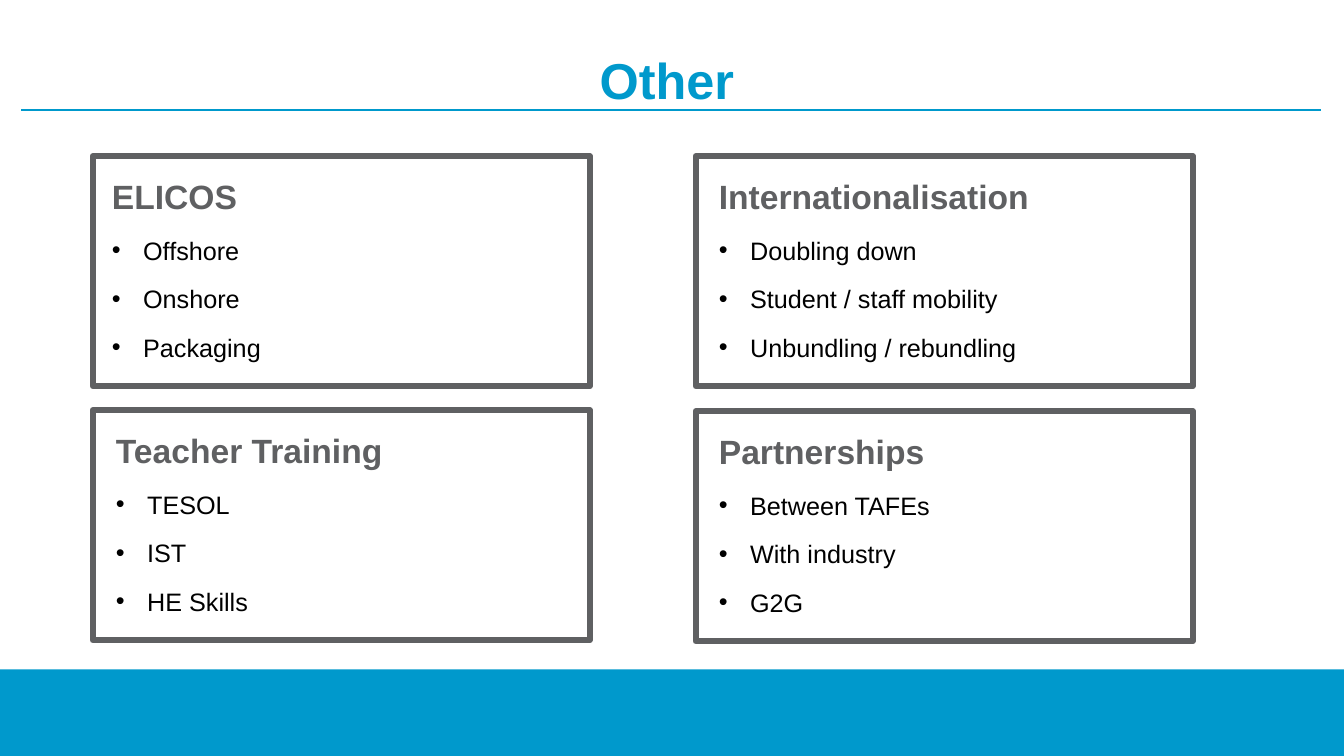
from lxml import etree
from pptx import Presentation
from pptx.dml.color import RGBColor
from pptx.enum.shapes import MSO_CONNECTOR, MSO_SHAPE
from pptx.enum.text import MSO_ANCHOR, MSO_AUTO_SIZE, PP_ALIGN
from pptx.oxml.ns import qn
from pptx.util import Inches, Pt

BLUE = RGBColor(0x00, 0x99, 0xCC)
GREY = RGBColor(0x5F, 0x60, 0x62)
BLACK = RGBColor(0x00, 0x00, 0x00)
RECTANGLE = MSO_SHAPE.RECTANGLE
STRAIGHT = MSO_CONNECTOR.STRAIGHT
TOP = MSO_ANCHOR.TOP
NO_AUTOFIT = MSO_AUTO_SIZE.NONE
LEFT, CENTER = PP_ALIGN.LEFT, PP_ALIGN.CENTER
COMPARISON_LAYOUT = 4

TITLE_FONT = {"name": "Arial", "size": Pt(36), "bold": True}
HEADING_FONT = {"name": "Arial", "size": Pt(24), "bold": True}
ITEM_FONT = {"name": "Arial", "size": Pt(18), "bold": False}
FRAME = {"word_wrap": True, "auto_size": NO_AUTOFIT, "vertical_anchor": TOP}
HEADING_SPACING = {"alignment": LEFT, "line_spacing": 1.05,
                   "space_before": Pt(0), "space_after": Pt(12)}
ITEM_SPACING = {"alignment": LEFT, "line_spacing": 1.05,
                "space_before": Pt(0), "space_after": Pt(12)}

PANEL_WIDTH, PANEL_HEIGHT = 4.93, 2.28
PANELS = [
    (0.92, 1.55, 0.09, "ELICOS", ["Offshore", "Onshore", "Packaging"]),
    (6.9, 1.55, 0.13, "Internationalisation",
     ["Doubling down", "Student / staff mobility", "Unbundling / rebundling"]),
    (0.92, 4.07, 0.13, "Teacher Training", ["TESOL", "IST", "HE Skills"]),
    (6.9, 4.08, 0.13, "Partnerships",
     ["Between TAFEs", "With industry", "G2G"]),
]


def set_format(target, values):
    for name, value in values.items():
        setattr(target, name, value)


def place(sp, left, top, width, height):
    set_format(sp, {"left": Inches(left), "top": Inches(top),
                    "width": Inches(width), "height": Inches(height)})


def set_bullet(p, indent, char=None):
    pPr = p._p.get_or_add_pPr()
    pPr.set("marL", str(Inches(indent)))
    pPr.set("indent", str(-Inches(indent)))
    if char:
        etree.SubElement(pPr, qn("a:buFont")).set("typeface", "Arial")
        etree.SubElement(pPr, qn("a:buChar")).set("char", char)
    else:
        etree.SubElement(pPr, qn("a:buNone"))


def add_text(p, text, font, color):
    r = p.add_run()
    r.text = text
    set_format(r.font, font)
    r.font.color.rgb = color


def add_header(s, left, top, width, height):
    sp = s.shapes.title
    place(sp, left, top, width, height)
    tf = sp.text_frame
    set_format(tf, {**FRAME, "margin_top": Inches(0.1), "margin_bottom": 0})
    p = tf.paragraphs[0]
    p.alignment = CENTER
    add_text(p, "Other", TITLE_FONT, BLUE)
    rule_y = Inches(top + 0.7)
    rule = s.shapes.add_connector(STRAIGHT, Inches(left), rule_y,
                                  Inches(left + 12.89), rule_y)
    rule.line.color.rgb = BLUE
    rule.line.width = Pt(1.5)
    etree.SubElement(rule._element.spPr, qn("a:effectLst"))


def add_footer_band(s, left, top, width, height):
    band = s.shapes.add_shape(RECTANGLE, Inches(left), Inches(top),
                              Inches(width), Inches(height))
    band.shadow.inherit = False
    band.fill.solid()
    band.fill.fore_color.rgb = BLUE
    band.line.fill.background()


def add_panel(s, body, left, top, width, height, inset, heading, items):
    border = s.shapes.add_shape(RECTANGLE, Inches(left), Inches(top),
                                Inches(width), Inches(height))
    border.shadow.inherit = False
    border.fill.background()
    border.line.color.rgb = GREY
    border.line.width = Pt(4.5)

    place(body, left + inset, top + 0.13, width - 0.26, height - 0.18)
    tf = body.text_frame
    set_format(tf, FRAME)
    p = tf.paragraphs[0]
    set_bullet(p, 0)
    set_format(p, HEADING_SPACING)
    add_text(p, heading, HEADING_FONT, GREY)
    for item in items:
        p = tf.add_paragraph()
        set_bullet(p, 0.31, "•")
        set_format(p, ITEM_SPACING)
        add_text(p, item, ITEM_FONT, BLACK)


def main():
    prs = Presentation()
    prs.slide_width, prs.slide_height = Inches(13.33), Inches(7.5)
    s = prs.slides.add_slide(prs.slide_layouts[COMPARISON_LAYOUT])
    bodies = [sp for sp in s.placeholders if sp.placeholder_format.idx > 0]
    add_footer_band(s, 0, 6.64, 13.33, 0.86)
    add_header(s, 0.21, 0.39, 12.81, 0.58)
    for body, (left, top, inset, heading, items) in zip(bodies, PANELS):
        add_panel(s, body, left, top, PANEL_WIDTH, PANEL_HEIGHT,
                  inset, heading, items)
    prs.save("out.pptx")


if __name__ == "__main__":
    main()
